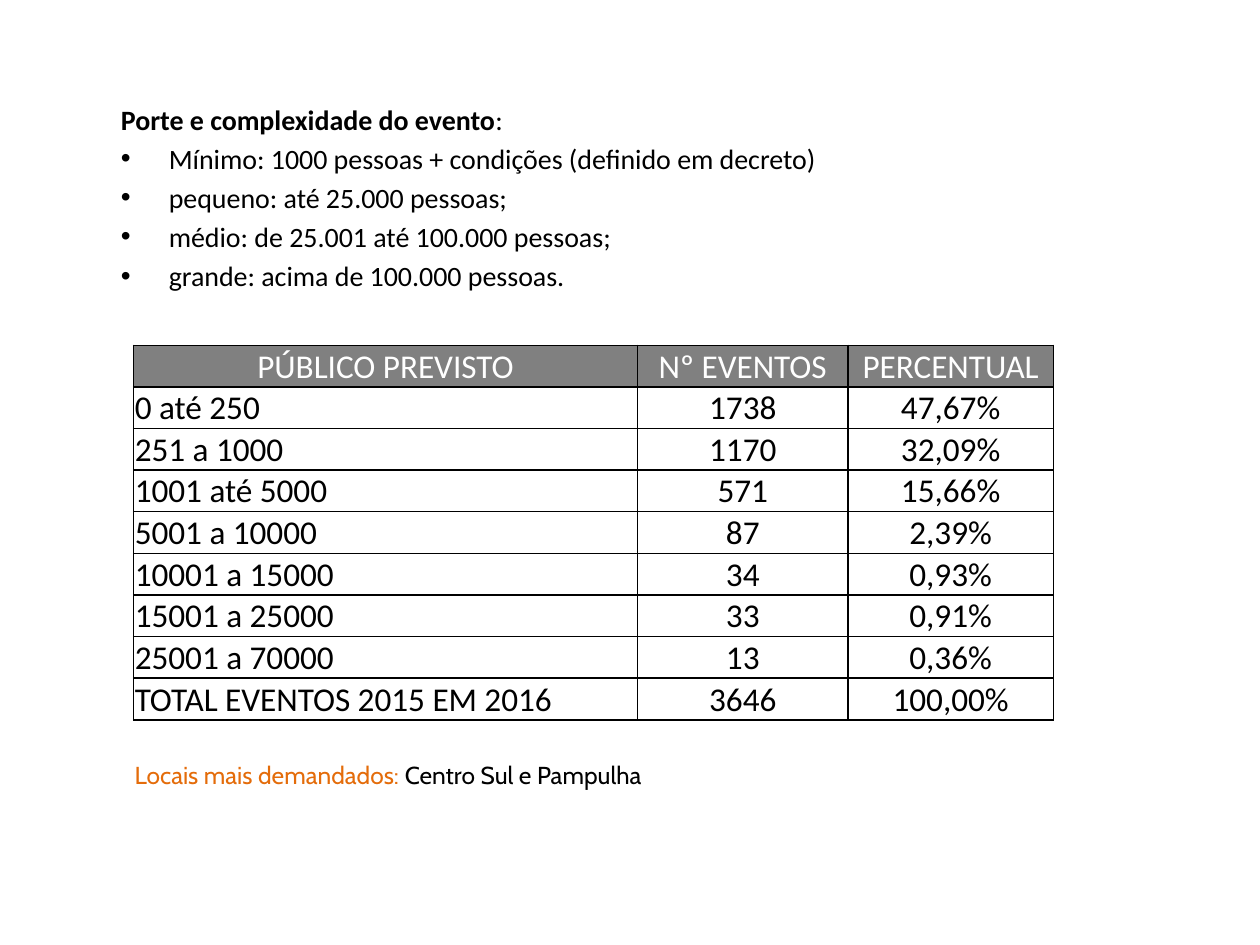
from pptx import Presentation
from pptx.dml.color import RGBColor
from pptx.enum.text import MSO_ANCHOR, PP_ALIGN
from pptx.oxml.ns import qn
from pptx.util import Inches, Pt
from lxml.etree import SubElement

BLACK = RGBColor(0x00, 0x00, 0x00)
WHITE = RGBColor(0xFF, 0xFF, 0xFF)
GRAY = RGBColor(0x80, 0x80, 0x80)
ORANGE = RGBColor(0xE4, 0x6C, 0x0A)

HEADING = "Porte e complexidade do evento"
SIZES = [
    "Mínimo: 1000 pessoas + condições (definido em decreto)",
    "pequeno: até 25.000 pessoas;",
    "médio: de 25.001 até 100.000 pessoas;",
    "grande: acima de 100.000 pessoas.",
]
AUDIENCE = [
    ("PÚBLICO PREVISTO", "Nº EVENTOS", "PERCENTUAL"),
    ("0 até 250", "1738", "47,67%"),
    ("251 a 1000", "1170", "32,09%"),
    ("1001 até 5000", "571", "15,66%"),
    ("5001 a 10000", "87", "2,39%"),
    ("10001 a 15000", "34", "0,93%"),
    ("15001 a 25000", "33", "0,91%"),
    ("25001 a 70000", "13", "0,36%"),
    ("TOTAL EVENTOS 2015 EM 2016", "3646", "100,00%"),
]


class SlideBuilder:
    """Holds the text style and the slide being filled."""

    font_name = "Calibri"

    def __init__(self, slide):
        self.slide = slide

    def style(self, font, size, color=BLACK, name=None):
        font.name = name or self.font_name
        font.size = Pt(size)
        font.color.rgb = color

    def set_bullet(self, paragraph, character=None, indent=0):
        """Use a hanging bullet, or none when no character is given."""
        properties = paragraph._p.get_or_add_pPr()
        properties.set("marL", str(Inches(indent)))
        properties.set("indent", str(-Inches(indent)))
        if character:
            SubElement(properties, qn("a:buChar")).set("char", character)
        else:
            SubElement(properties, qn("a:buNone"))

    def bullet_list(self, left, top, width, height, heading, items):
        body = self.slide.placeholders[1]
        body.left, body.top = Inches(left), Inches(top)
        body.width, body.height = Inches(width), Inches(height)
        paragraph = body.text_frame.paragraphs[0]
        self.set_bullet(paragraph)
        paragraph.space_before = Pt(0)
        self.style(paragraph.font, 16)
        for text, bold in ((heading, True), (":", False)):
            run = paragraph.add_run()
            run.text = text
            run.font.bold = bold
            self.style(run.font, 16)
        for item in items:
            paragraph = body.text_frame.add_paragraph()
            paragraph.text = item
            self.set_bullet(paragraph, "•", 0.38)
            paragraph.space_before = Pt(3.2)
            self.style(paragraph.font, 16)

    def set_borders(self, cell):
        properties = cell._tc.get_or_add_tcPr()
        for position, side in enumerate(("lnL", "lnR", "lnT", "lnB")):
            line = properties.makeelement(qn(f"a:{side}"), {"w": str(Pt(1))})
            fill = SubElement(line, qn("a:solidFill"))
            SubElement(fill, qn("a:srgbClr")).set("val", str(BLACK))
            properties.insert(position, line)

    def table(self, left, top, column_widths, row_height, rows):
        frame = self.slide.shapes.add_table(
            len(rows), len(column_widths), Inches(left), Inches(top),
            Inches(sum(column_widths)), Inches(row_height * len(rows)))
        table = frame.table
        for column, width in zip(table.columns, column_widths):
            column.width = Inches(width)
        for row_index, values in enumerate(rows):
            table.rows[row_index].height = Inches(row_height)
            for column_index, value in enumerate(values):
                is_header = row_index == 0
                cell = table.cell(row_index, column_index)
                cell.margin_left = cell.margin_right = cell.margin_top = Inches(0.01)
                cell.margin_bottom = 0
                cell.vertical_anchor = MSO_ANCHOR.BOTTOM
                if is_header:
                    cell.fill.solid()
                    cell.fill.fore_color.rgb = GRAY
                else:
                    cell.fill.background()
                self.set_borders(cell)
                paragraph = cell.text_frame.paragraphs[0]
                paragraph.text = value
                centered = is_header or column_index > 0
                paragraph.alignment = PP_ALIGN.CENTER if centered else PP_ALIGN.LEFT
                paragraph.font.bold = False
                self.style(paragraph.font, 19, WHITE if is_header else BLACK)

    def note(self, left, top, width, height, parts):
        box = self.slide.shapes.add_textbox(
            Inches(left), Inches(top), Inches(width), Inches(height))
        frame = box.text_frame
        frame.word_wrap = True
        frame.margin_left = frame.margin_right = Inches(0.1)
        frame.margin_top = frame.margin_bottom = Inches(0.1)
        paragraph = frame.paragraphs[0]
        paragraph.alignment = PP_ALIGN.JUSTIFY
        paragraph.space_after = Pt(9)
        for text, color in parts:
            run = paragraph.add_run()
            run.text = text
            self.style(run.font, 14, color, "Cabin")


def main():
    presentation = Presentation()
    presentation.slide_width, presentation.slide_height = Inches(10), Inches(7.5)
    slide = presentation.slides.add_slide(presentation.slide_layouts[1])
    title = slide.shapes.title
    title.element.getparent().remove(title.element)

    builder = SlideBuilder(slide)
    builder.bullet_list(0.86, 0.76, 9.14, 4.92, HEADING, SIZES)
    builder.table(1.06, 2.74, (4, 1.67, 1.63), 0.33, AUDIENCE)
    builder.note(0.97, 5.93, 7.57, 1.05, [
        ("Locais mais demandados: ", ORANGE),
        ("Centro Sul e Pampulha", BLACK),
    ])
    presentation.save("out.pptx")


if __name__ == "__main__":
    main()
